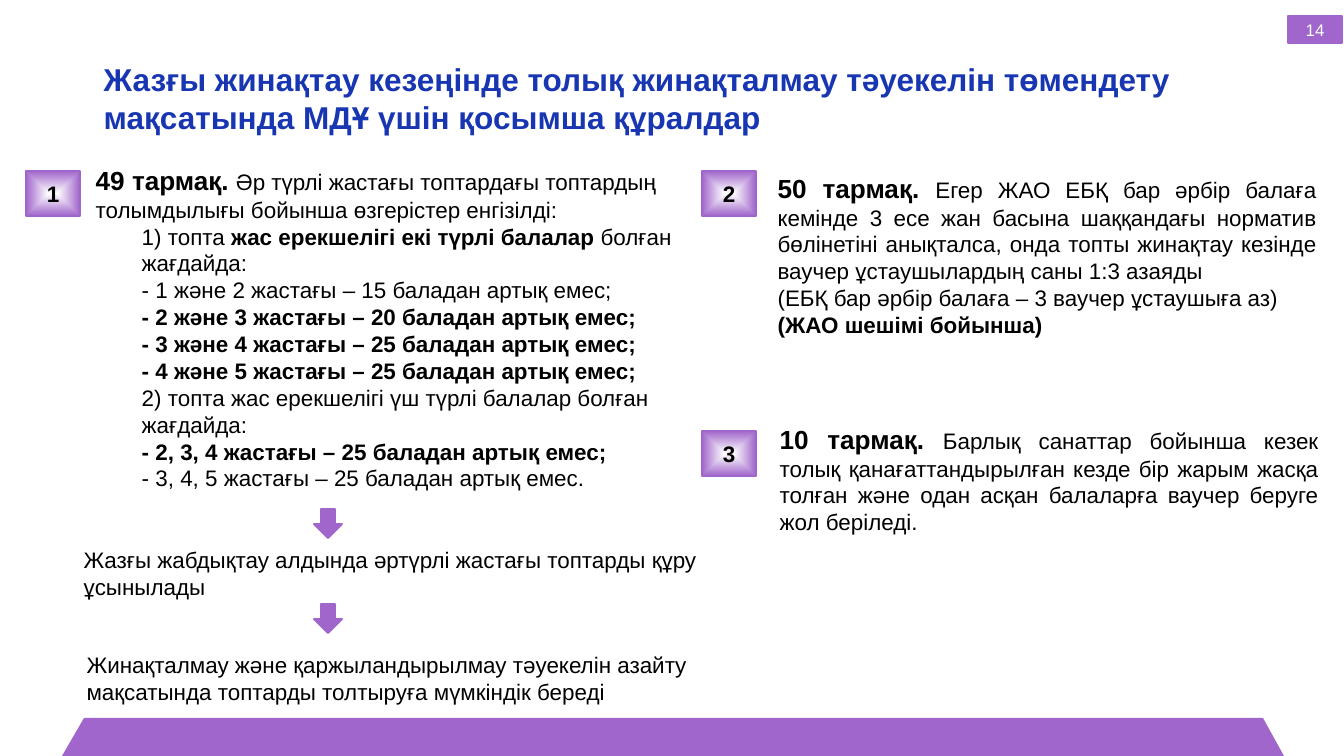
from lxml.etree import SubElement
from pptx import Presentation
from pptx.dml.color import RGBColor
from pptx.enum.shapes import MSO_SHAPE
from pptx.enum.text import MSO_ANCHOR, MSO_AUTO_SIZE, PP_ALIGN
from pptx.oxml.ns import qn
from pptx.util import Pt

PX = 914400 / 67.2
COLORS = {"purple": "A066CB", "blue": "1836B2", "black": "000000", "white": "FFFFFF"}
STYLES = {"lead": (28, True), "bold": (24, True), "plain": (24, False),
          "title": (33.8, True), "number": (18, False)}
INDENT = 46

TITLE = ("Жазғы жинақтау кезеңінде толық жинақталмау тәуекелін төмендету "
         "мақсатында МДҰ үшін қосымша құралдар")
GROUP_INTRO = [
    [("49 тармақ. ", "lead"),
     ("Әр түрлі жастағы топтардағы топтардың толымдылығы бойынша өзгерістер енгізілді:", "plain")],
]
GROUP_RULES = [
    [("1) топта ", "plain"), ("жас ерекшелігі екі түрлі балалар ", "bold"),
     ("болған жағдайда:", "plain")],
    [("- 1 және 2 жастағы – 15 баладан артық емес;", "plain")],
    [("- 2 және 3 жастағы – 20 баладан артық емес;", "bold")],
    [("- 3 және 4 жастағы – 25 баладан артық емес;", "bold")],
    [("- 4 және 5 жастағы – 25 баладан артық емес;", "bold")],
    [("2) топта жас ерекшелігі үш түрлі балалар болған жағдайда:", "plain")],
    [("- 2, 3, 4 жастағы – 25 баладан артық емес;", "bold")],
    [("- 3, 4, 5 жастағы – 25 баладан артық емес.", "plain")],
]
VOUCHER_LIMIT = [
    [("50 тармақ. ", "lead"),
     ("Егер ЖАО ЕБҚ бар әрбір балаға кемінде 3 есе жан басына шаққандағы норматив "
      "бөлінетіні анықталса, онда топты жинақтау кезінде ваучер ұстаушылардың саны "
      "1:3 азаяды", "plain")],
    [("(ЕБҚ бар әрбір балаға – 3 ваучер ұстаушыға аз)", "plain")],
    [("(ЖАО шешімі бойынша)", "bold")],
]
VOUCHER_AGE = [
    [("10 тармақ. ", "lead"),
     ("Барлық санаттар бойынша кезек толық қанағаттандырылған кезде бір жарым жасқа "
      "толған және одан асқан балаларға ваучер беруге жол беріледі.", "plain")],
]
ADVICE = [[("Жазғы жабдықтау алдында әртүрлі жастағы топтарды құру ұсынылады", "plain")]]
RESULT = [[("Жинақталмау және қаржыландырылмау тәуекелін азайту мақсатында топтарды "
            "толтыруға мүмкіндік береді", "plain")]]

TEXT_BOXES = [
    (ADVICE, (77, 543, 640, 62), PP_ALIGN.LEFT),
    (RESULT, (80, 648, 640, 62), PP_ALIGN.LEFT),
    (VOUCHER_LIMIT, (771, 169, 552, 203), PP_ALIGN.JUSTIFY),
    (VOUCHER_AGE, (773, 420, 552, 121), PP_ALIGN.JUSTIFY),
]
BADGES = [("1", 26, 171), ("2", 702, 171), ("3", 702, 431)]
ARROW_TOPS = [509, 604]
FOOTER_POINTS = [(84, 718), (1263, 718), (1284, 756), (62, 756)]


def color(name):
    return RGBColor.from_string(COLORS[name])


def emu(lengths):
    return [round(length * PX) for length in lengths]


def place(shape, box):
    shape.left, shape.top, shape.width, shape.height = emu(box)


def write(shape, paragraphs, ink="black", align=PP_ALIGN.LEFT,
          anchor=MSO_ANCHOR.TOP, indents=None):
    frame = shape.text_frame
    frame.word_wrap = True
    frame.auto_size = MSO_AUTO_SIZE.NONE
    frame.vertical_anchor = anchor
    for index, runs in enumerate(paragraphs):
        paragraph = frame.add_paragraph() if index else frame.paragraphs[0]
        paragraph.alignment = align
        paragraph.space_before = Pt(0)
        properties = paragraph._p.get_or_add_pPr()
        properties.set("marL", str(round((indents[index] if indents else 0) * PX)))
        properties.set("indent", "0")
        SubElement(properties, qn("a:buNone"))
        for text, style in runs:
            run = paragraph.add_run()
            run.text = text
            size, run.font.bold = STYLES[style]
            run.font.size = Pt(size)
            run.font.name = "Arial"
            run.font.color.rgb = color(ink)


def paint(shape):
    shape.shadow.inherit = False
    shape.fill.solid()
    shape.fill.fore_color.rgb = color("purple")
    shape.line.color.rgb = color("purple")
    shape.line.width = Pt(2)


def add_block(slide, kind, box):
    shape = slide.shapes.add_shape(kind, *emu(box))
    paint(shape)
    return shape


def add_badge(slide, label, left, top):
    badge = add_block(slide, MSO_SHAPE.RECTANGLE, (left, top, 54, 45))
    badge.fill.gradient()
    for stop, name, position in zip(badge.fill.gradient_stops, ("white", "purple"), (0, 1)):
        stop.color.rgb = color(name)
        stop.position = position
    gradient = badge._element.spPr.find(qn("a:gradFill"))
    gradient.remove(gradient.find(qn("a:lin")))
    shade = SubElement(gradient, qn("a:path"), path="shape")
    SubElement(shade, qn("a:fillToRect"), l="50000", t="50000", r="50000", b="50000")
    write(badge, [[(label, "bold")]], align=PP_ALIGN.CENTER, anchor=MSO_ANCHOR.MIDDLE)


def main():
    """Build the slide on extra tools for filling preschool groups."""
    presentation = Presentation()
    presentation.slide_width, presentation.slide_height = emu((1344, 756))
    slide = presentation.slides.add_slide(presentation.slide_layouts[1])
    title, body = slide.placeholders

    builder = slide.shapes.build_freeform(*FOOTER_POINTS[0], scale=PX)
    builder.add_line_segments(FOOTER_POINTS[1:], close=True)
    footer = builder.convert_to_shape()
    paint(footer)
    footer.line.fill.background()

    number = add_block(slide, MSO_SHAPE.RECTANGLE, (1288, 16, 54, 27))
    write(number, [[("14", "number")]], ink="white", align=PP_ALIGN.CENTER,
          anchor=MSO_ANCHOR.MIDDLE)

    place(title, (97, 57, 1227, 83))
    write(title, [[(TITLE, "title")]], ink="blue")
    place(body, (89, 161, 597, 337))
    write(body, GROUP_INTRO + GROUP_RULES,
          indents=[0] * len(GROUP_INTRO) + [INDENT] * len(GROUP_RULES))

    for paragraphs, box, align in TEXT_BOXES:
        write(slide.shapes.add_textbox(*emu(box)), paragraphs, align=align)
    for badge in BADGES:
        add_badge(slide, *badge)
    for top in ARROW_TOPS:
        add_block(slide, MSO_SHAPE.DOWN_ARROW, (314, top, 28, 29))

    presentation.save("out.pptx")


if __name__ == "__main__":
    main()
